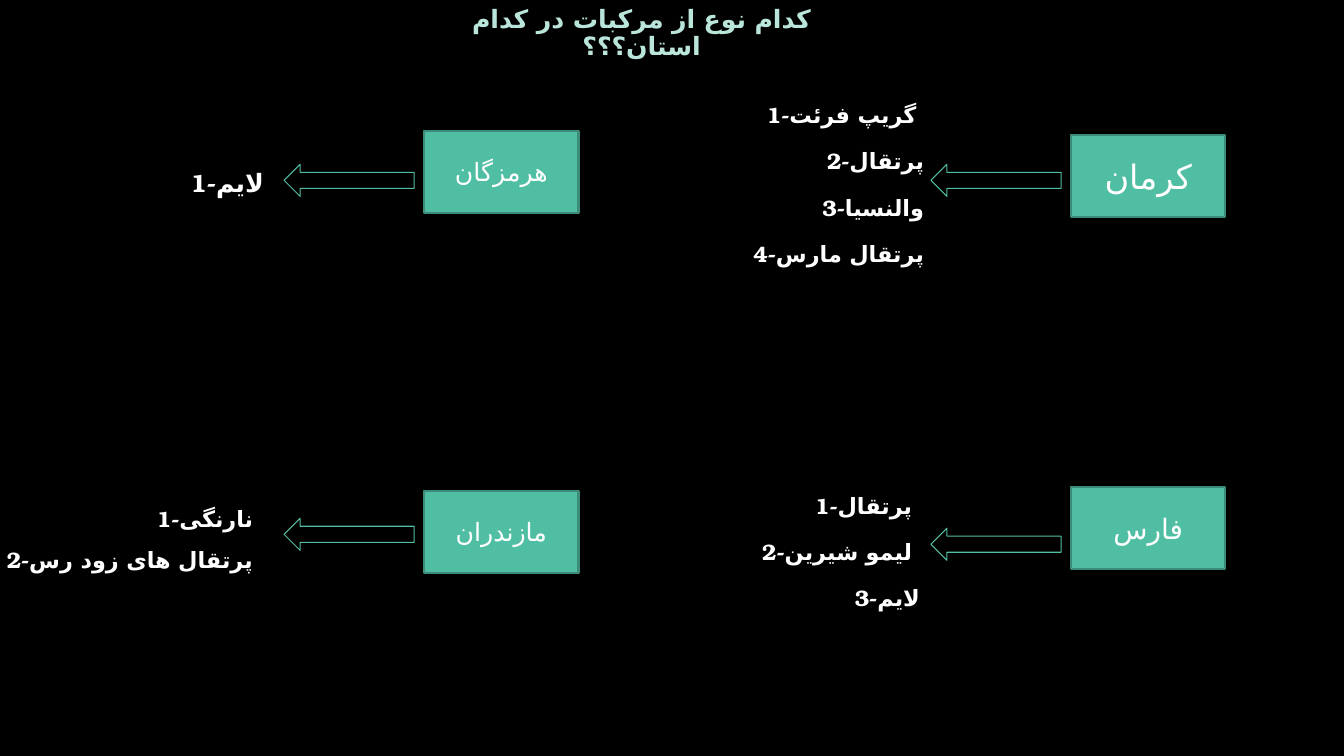
from dataclasses import dataclass

from lxml.etree import SubElement
from pptx import Presentation
from pptx.dml.color import RGBColor
from pptx.enum.lang import MSO_LANGUAGE_ID as Language
from pptx.enum.shapes import MSO_SHAPE as Shape
from pptx.enum.text import MSO_ANCHOR as Anchor, PP_ALIGN as Align
from pptx.oxml.ns import qn
from pptx.util import Cm, Pt


@dataclass(frozen=True)
class Theme:
    font: str = "TeX Gyre Bonum"
    background: RGBColor = RGBColor.from_string("000000")
    title: RGBColor = RGBColor.from_string("B9E5DA")
    text: RGBColor = RGBColor.from_string("FFFFFF")
    accent: RGBColor = RGBColor.from_string("50BEA3")
    border: RGBColor = RGBColor.from_string("3B8D79")
    title_size: int = 18


@dataclass(frozen=True)
class Province:
    name: str
    name_size: int
    left: float          # left edge of the arrow
    top: float           # top edge of the name box
    arrow_drop: float    # arrow top below the region's top
    fruits: tuple
    fruit_size: int
    list_box: tuple      # left and top within the region, width, height
    alignment: Align = Align.RIGHT
    anchor: Anchor = Anchor.TOP
    line_spacing: float = 1.2


THEME = Theme()
LEFT_COLUMN, RIGHT_COLUMN = 7.16, 23.46
ARROW_WIDTH, ARROW_HEIGHT = 3.28, 0.81
NAME_OFFSET, NAME_WIDTH, NAME_HEIGHT = 3.53, 3.89, 2.06

PROVINCES = (
    Province("کرمان", 24, RIGHT_COLUMN, 3.4, 0.74,
             ("1-گریپ فرئت ", "2-پرتقال", "3-والنسیا", "4-پرتقال مارس"),
             16, (-9.09, -1.11, 9.17, 8)),
    Province("فارس", 20, RIGHT_COLUMN, 12.27, 1.04,
             ("1-پرتقال ", "2-لیمو شیرین ", "3-لایم"),
             16, (-10.49, -0.13, 10.46, 8)),
    Province("هرمزگان", 18, LEFT_COLUMN, 3.3, 0.84,
             ("1-لایم",), 18, (-6.02, 0.64, 9.17, 3.99), Align.CENTER),
    Province("مازندران", 18, LEFT_COLUMN, 12.37, 0.69,
             ("1-نارنگی", "2-پرتقال های زود رس"),
             16, (-9.67, -0.1, 9.14, 2.29),
             anchor=Anchor.BOTTOM, line_spacing=1.0),
)


def format_paragraph(paragraph, size, color, bold=False, alignment=Align.CENTER):
    paragraph.alignment = alignment
    for run in paragraph.runs:
        run.font.name = THEME.font
        run.font.size = Pt(size)
        run.font.bold = bold
        run.font.color.rgb = color
        run.font.language_id = Language.FARSI
        # Persian letters take the complex-script typeface
        properties = run.font._element
        SubElement(properties, qn("a:cs")).set("typeface", THEME.font)


def add_title(slide, left, top, width, height):
    title = slide.shapes.title
    title.left, title.top = Cm(left), Cm(top)
    title.width, title.height = Cm(width), Cm(height)
    frame = title.text_frame
    frame.text = "کدام نوع از مرکبات در کدام استان؟؟؟"
    frame.word_wrap = True
    frame.vertical_anchor = Anchor.MIDDLE
    paragraph = frame.paragraphs[0]
    paragraph.line_spacing = 0.9
    format_paragraph(paragraph, THEME.title_size, THEME.title, bold=True)


def add_outlined_shape(slide, kind, box, line_color, line_width):
    shape = slide.shapes.add_shape(kind, *map(Cm, box))
    shape.shadow.inherit = False
    shape.fill.background()
    shape.line.color.rgb = line_color
    shape.line.width = Pt(line_width)
    return shape


def add_fruit_list(slide, province, left, top, width, height):
    frame = slide.shapes.add_textbox(
        Cm(left), Cm(top), Cm(width), Cm(height)).text_frame
    frame.word_wrap = True
    frame.vertical_anchor = province.anchor
    frame.text = "\n".join(province.fruits)
    for paragraph in frame.paragraphs:
        paragraph.line_spacing = province.line_spacing
        paragraph.space_before = Pt(10)
        format_paragraph(paragraph, province.fruit_size, THEME.text,
                         bold=True, alignment=province.alignment)


def add_province(slide, province):
    left, top = province.left, province.top

    # Citrus fruits grown there
    list_left, list_top, width, height = province.list_box
    add_fruit_list(slide, province, left + list_left, top + list_top, width, height)

    # Arrow from the province to its fruits
    arrow_box = (left, top + province.arrow_drop, ARROW_WIDTH, ARROW_HEIGHT)
    add_outlined_shape(slide, Shape.LEFT_ARROW, arrow_box, THEME.accent, 0.75)

    # Province name
    name_box = (left + NAME_OFFSET, top, NAME_WIDTH, NAME_HEIGHT)
    name = add_outlined_shape(slide, Shape.RECTANGLE, name_box, THEME.border, 1.5)
    name.fill.solid()
    name.fill.fore_color.rgb = THEME.accent
    name.text_frame.text = province.name
    name.text_frame.vertical_anchor = Anchor.MIDDLE
    format_paragraph(name.text_frame.paragraphs[0], province.name_size, THEME.text)


def main():
    presentation = Presentation()
    presentation.slide_width, presentation.slide_height = Cm(33.87), Cm(19.05)
    slide = presentation.slides.add_slide(presentation.slide_layouts[5])
    slide.background.fill.solid()
    slide.background.fill.fore_color.rgb = THEME.background

    add_title(slide, 10.19, 0.64, 11.96, 0.43)
    for province in PROVINCES:
        add_province(slide, province)
    presentation.save("out.pptx")


if __name__ == "__main__":
    main()
